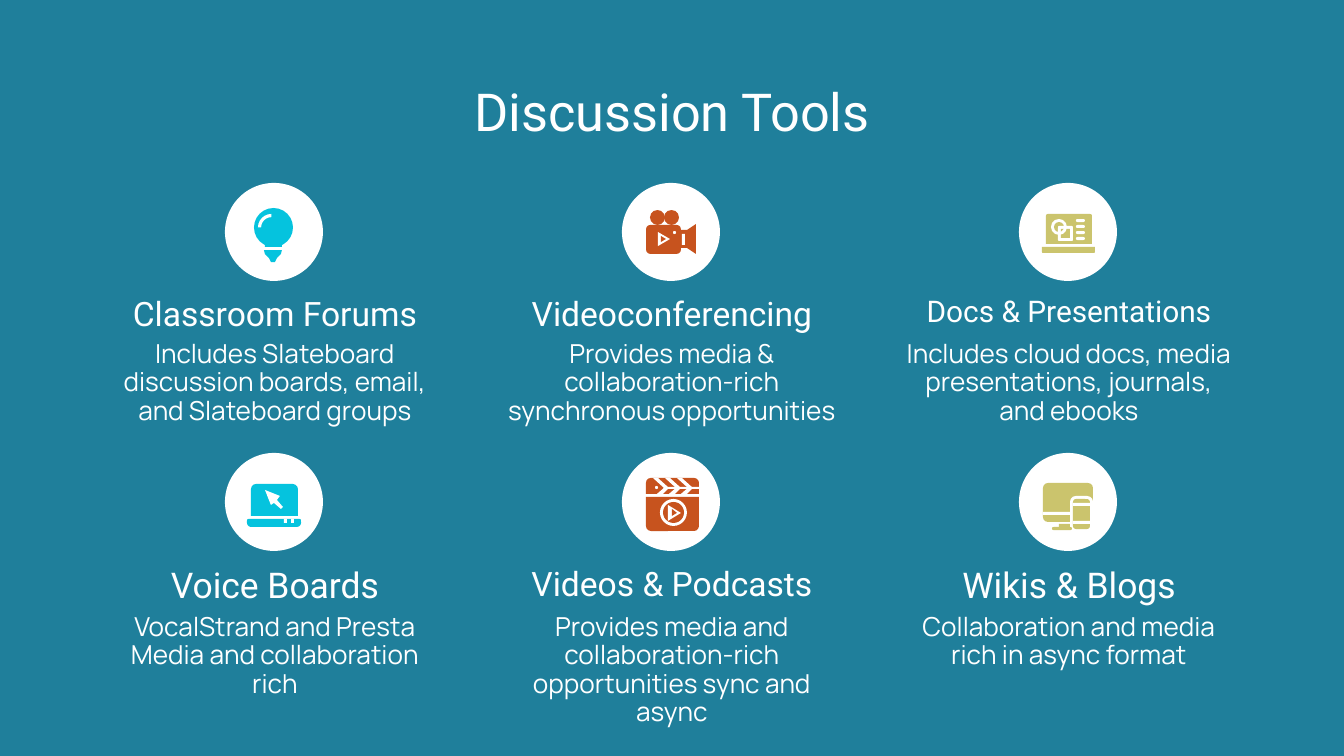
import pptx
import pptx.dml.color
import pptx.enum.shapes
import pptx.enum.text
import pptx.util
from lxml import etree
from dataclasses import dataclass
from typing import NamedTuple

SLIDE_W, SLIDE_H = 1344, 756
SCALE = 9144000 / SLIDE_W  # EMU per px
INSET = 13
CIRCLE = 98
CARD_W, CARD_LEFT, CARD_PITCH = 356, 97, 397

COLORS = {"teal": "1F7F9B", "white": "FFFFFF", "cyan": "05C3DE",
          "rust": "C7531E", "olive": "CBC46D"}
KIND = pptx.enum.shapes.MSO_SHAPE
OVAL, RECT, ROUND = KIND.OVAL, KIND.RECTANGLE, KIND.ROUNDED_RECTANGLE
TABBED, ARC = KIND.ROUND_2_SAME_RECTANGLE, KIND.BLOCK_ARC
QUARTER = 54.0  # 90 degrees in adjustment units


class Box(NamedTuple):
    left: int
    top: int
    width: int
    height: int


class Row(NamedTuple):
    circle: int
    heading: int
    body: int


class Preset(NamedTuple):
    kind: pptx.enum.shapes.MSO_SHAPE
    box: Box
    color: str
    adjust: tuple[float, ...] = ()


class Outline(NamedTuple):
    points: list[tuple[int, int]]
    color: str


@dataclass
class Card:
    heading: str
    size: int
    body: list[str]
    icon: list[Preset | Outline]


ROWS = [Row(183, 280, 328), Row(453, 550, 601)]

# Icon parts, placed from the top left of their circle
BULB = [
    Preset(OVAL, Box(29, 25, 39, 39), "cyan"),
    Preset(RECT, Box(40, 56, 17, 8), "cyan"),
    Preset(ARC, Box(33, 31, 27, 27), "white", (2 * QUARTER, 3 * QUARTER, 0.12)),
    Outline([(39, 67), (57, 67), (56, 71), (52, 75), (50, 79), (46, 79), (44, 75), (40, 71)], "cyan"),
]
CURSOR_LAPTOP = [
    Preset(TABBED, Box(26, 31, 47, 32), "cyan", (0.16, 0)),
    Outline([(40, 37), (55, 43), (52, 47), (58, 54), (56, 56), (49, 50), (46, 52)], "white"),
    Preset(TABBED, Box(22, 66, 54, 8), "cyan", (0.2, 0.5)),
    *(Preset(RECT, Box(x, 66, 3, 4), "white") for x in (59, 66)),
]
VIDEO_CAMERA = [
    *(Preset(OVAL, Box(x, 27, 15, 15), "rust") for x in (28, 42)),
    Preset(ROUND, Box(24, 42, 35, 29), "rust", (0.15,)),
    Outline([(59, 47), (65, 47), (74, 41), (74, 71), (65, 65), (59, 65)], "rust"),
    Preset(RECT, Box(60, 51, 3, 11), "white"),
    Preset(OVAL, Box(51, 48, 3, 3), "white"),
    Outline([(36, 49), (48, 56), (36, 63)], "white"),
    Outline([(39, 53), (44, 56), (39, 59)], "rust"),
]
SHAPES_LAPTOP = [
    Preset(TABBED, Box(27, 31, 46, 30), "olive", (0.06, 0)),
    Preset(OVAL, Box(32, 36, 16, 16), "white"),
    Preset(OVAL, Box(35, 39, 10, 10), "olive"),
    Preset(ROUND, Box(39, 43, 15, 15), "white", (0.08,)),
    Preset(RECT, Box(42, 46, 9, 9), "olive"),
    Preset(ARC, Box(32, 36, 16, 16), "white", (0, QUARTER, 0.18)),
    *(Preset(ROUND, Box(57, y, 9, 3), "white", (0.5,)) for y in range(36, 55, 6)),
    Preset(TABBED, Box(23, 64, 53, 6), "olive", (0, 0.2)),
]
CLAPPER = [
    Preset(TABBED, Box(24, 25, 53, 16), "rust", (0.3, 0)),
    Preset(RECT, Box(45, 34, 32, 2), "white"),
    *(Outline([(x, 25), (x + 5, 25), (x + 16, 35), (x + 10, 41), (x + 4, 41), (x + 11, 35)], "white")
      for x in (31, 43, 55)),
    Preset(OVAL, Box(33, 33, 3, 3), "white"),
    Preset(TABBED, Box(24, 44, 53, 34), "rust", (0, 0.15)),
    Preset(OVAL, Box(38, 46, 27, 27), "white"),
    Preset(OVAL, Box(41, 49, 21, 21), "rust"),
    Outline([(46, 52), (59, 60), (46, 68)], "white"),
    Outline([(50, 56), (55, 60), (50, 63)], "rust"),
]
DEVICES = [
    Preset(ROUND, Box(24, 30, 50, 39), "olive", (0.13,)),
    Preset(RECT, Box(24, 59, 50, 3), "white"),
    Preset(TABBED, Box(51, 43, 23, 35), "white", (0.25, 0)),
    Preset(RECT, Box(40, 71, 11, 4), "olive"),
    Preset(ROUND, Box(33, 74, 20, 3), "olive", (0.5,)),
    Preset(ROUND, Box(54, 46, 17, 30), "olive", (0.18,)),
    *(Preset(RECT, Box(54, y, 17, 3), "white") for y in (50, 68)),
]

CARDS = [
    Card("Classroom Forums", 18,
         ["Includes Slateboard discussion boards, email, and Slateboard groups"], BULB),
    Card("Videoconferencing", 18,
         ["Provides media & collaboration-rich synchronous opportunities"], VIDEO_CAMERA),
    Card("Docs & Presentations", 16,
         ["Includes cloud docs, media presentations, journals, and ebooks"], SHAPES_LAPTOP),
    Card("Voice Boards", 19,
         ["VocalStrand and Presta", "Media and collaboration rich"], CURSOR_LAPTOP),
    Card("Videos & Podcasts", 18,
         ["Provides media and collaboration-rich opportunities sync and async"], CLAPPER),
    Card("Wikis & Blogs", 19, ["Collaboration and media rich in async format"], DEVICES),
]


def px(length: int) -> pptx.util.Emu:
    return pptx.util.Emu(round(length * SCALE))


def rgb(color: str) -> pptx.dml.color.RGBColor:
    return pptx.dml.color.RGBColor.from_string(COLORS[color])


def paint(shape, color: str) -> None:
    shape.shadow.inherit = False
    shape.fill.solid()
    shape.fill.fore_color.rgb = rgb(color)
    shape.line.fill.background()


def draw_part(slide, part: Preset | Outline, left: int, top: int) -> None:
    if isinstance(part, Outline):
        points = [(left + x, top + y) for x, y in part.points]
        builder = slide.shapes.build_freeform(*points[0], scale=SCALE)
        builder.add_line_segments(points[1:], close=True)
        shape = builder.convert_to_shape()
    else:
        x, y, width, height = part.box
        shape = slide.shapes.add_shape(part.kind, px(left + x), px(top + y), px(width), px(height))
        for index, value in enumerate(part.adjust):
            shape.adjustments[index] = value
    paint(shape, part.color)


def write(shape, lines: list[str], size: int, font: str, spacing: float = 1.0) -> None:
    frame = shape.text_frame
    frame_format = {"word_wrap": True, "auto_size": pptx.enum.text.MSO_AUTO_SIZE.NONE,
                    "vertical_anchor": pptx.enum.text.MSO_ANCHOR.TOP}
    frame_format |= {f"margin_{side}": px(INSET) for side in ("left", "top", "right", "bottom")}
    for name, value in frame_format.items():
        setattr(frame, name, value)
    for index, line in enumerate(lines):
        paragraph = frame.add_paragraph() if index else frame.paragraphs[0]
        paragraph.alignment = pptx.enum.text.PP_ALIGN.CENTER
        paragraph.line_spacing = spacing
        run = paragraph.add_run()
        run.text = line
        for name, value in {"name": font, "size": pptx.util.Pt(size)}.items():
            setattr(run.font, name, value)
        run.font.color.rgb = rgb("white")


def draw_card(slide, card: Card, left: int, row: Row) -> None:
    circle_left = left + (CARD_W - CIRCLE) // 2 - 1
    draw_part(slide, Preset(OVAL, Box(0, 0, CIRCLE, CIRCLE), "white"), circle_left, row.circle)
    for part in card.icon:
        draw_part(slide, part, circle_left, row.circle)
    body = slide.shapes.add_textbox(px(left), px(row.body), px(CARD_W), px(98))
    write(body, card.body, 14, "Manrope", 0.9)
    heading = slide.shapes.add_textbox(px(left), px(row.heading), px(CARD_W), px(62))
    write(heading, [card.heading], card.size, "Roboto")


def main() -> None:
    deck = pptx.Presentation()
    deck.slide_width, deck.slide_height = px(SLIDE_W), px(SLIDE_H)
    slide = deck.slides.add_slide(deck.slide_layouts[5])
    slide.background.fill.solid()
    slide.background.fill.fore_color.rgb = rgb("teal")

    # Title
    title = slide.shapes.title
    for name, value in {"left": 46, "top": 66, "width": 1252, "height": 85}.items():
        setattr(title, name, px(value))
    write(title, ["Discussion Tools"], 28, "Roboto")

    # Grid of tools, three to a row
    for index, card in enumerate(CARDS):
        row, column = divmod(index, 3)
        draw_card(slide, card, CARD_LEFT + column * CARD_PITCH, ROWS[row])

    deck.save("out.pptx")


if __name__ == "__main__":
    main()
